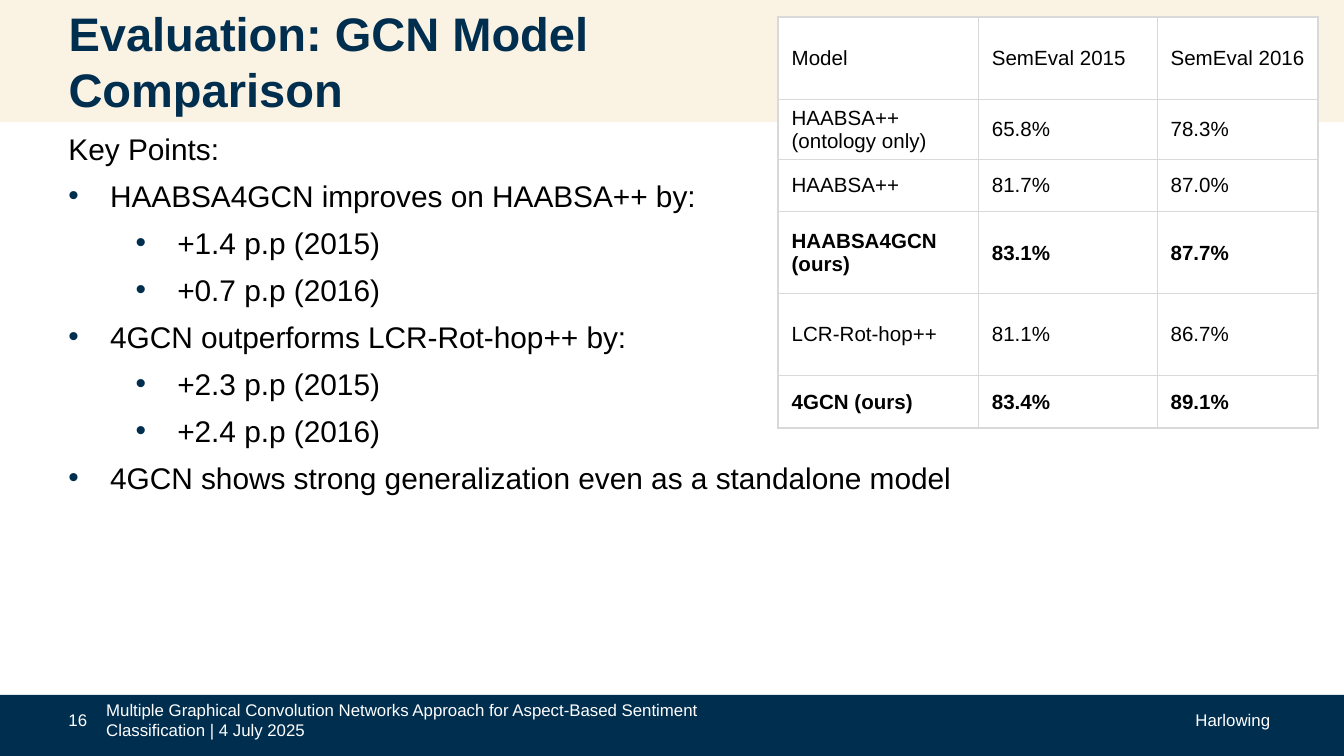
import pptx
import pptx.util
import pptx.dml.color
import pptx.enum.shapes
import pptx.enum.text
import pptx.oxml.ns
from lxml import etree

Inches = pptx.util.Inches
Pt = pptx.util.Pt
qn = pptx.oxml.ns.qn
Align = pptx.enum.text.PP_ALIGN
Anchor = pptx.enum.text.MSO_ANCHOR


class Theme:
    font = "Arial"
    navy = "002E4F"
    cream = "FAF2E3"
    white = "FFFFFF"
    black = "000000"
    grid = "D9D9D9"
    title = 25.2
    body = 16
    cell = 11
    foot = 9


def style(para, size, color, bold=False):
    para.font.name = Theme.font
    para.font.size = Pt(size)
    para.font.bold = bold
    para.font.color.rgb = pptx.dml.color.RGBColor.from_string(color)


def add_text(box, words, size, color, anchor=Anchor.MIDDLE, pad=0):
    frame = slide.shapes.add_textbox(*map(Inches, box)).text_frame
    frame.word_wrap = True
    frame.vertical_anchor = anchor
    frame.margin_left = frame.margin_right = 0
    frame.margin_top = frame.margin_bottom = Inches(pad)
    frame.text = words
    style(frame.paragraphs[0], size, color)
    return frame


deck = pptx.Presentation()
deck.slide_width = Inches(10)
deck.slide_height = deck.slide_width * 9 // 16
slide = deck.slides.add_slide(deck.slide_layouts[6])

foot = Inches(5.17)
for top, height, color in [(foot, deck.slide_height - foot, Theme.navy),
                           (0, Inches(0.91), Theme.cream)]:
    band = slide.shapes.add_shape(
        pptx.enum.shapes.MSO_SHAPE.RECTANGLE,
        0, top, deck.slide_width, height)
    band.shadow.inherit = False
    band.fill.solid()
    band.fill.fore_color.rgb = pptx.dml.color.RGBColor.from_string(color)
    band.line.fill.background()

add_text((0.51, 5.28, 0.2, 0.15), "16", Theme.foot, Theme.white)
add_text((0.79, 5.28, 4.72, 0.15),
         "Multiple Graphical Convolution Networks Approach for "
         "Aspect-Based Sentiment Classification | 4 July 2025",
         Theme.foot, Theme.white)
owner = add_text((6.73, 5.28, 2.72, 0.15), "Harlowing",
                 Theme.foot, Theme.white, Anchor.TOP)
owner.paragraphs[0].alignment = Align.RIGHT

title = add_text((0.51, 0.06, 5.28, 0.78), "Evaluation: GCN Model Comparison",
                 Theme.title, Theme.navy, pad=0.05)
title.paragraphs[0].font.bold = True

points = [
    (0, "HAABSA4GCN improves on HAABSA++ by:"),
    (1, "+1.4 p.p (2015)"),
    (1, "+0.7 p.p (2016)"),
    (0, "4GCN outperforms LCR-Rot-hop++ by:"),
    (1, "+2.3 p.p (2015)"),
    (1, "+2.4 p.p (2016)"),
    (0, "4GCN shows strong generalization even as a standalone model"),
]
body = add_text((0.51, 0.97, 8.94, 4.13), "Key Points:",
                Theme.body, Theme.black, Anchor.TOP)
for level, words in points:
    para = body.add_paragraph()
    para.text = words
    para.level = level
    props = para._p.get_or_add_pPr()
    props.set("marL", str(Inches(0.31 + 0.5 * level)))
    props.set("indent", str(-Inches(0.31)))
    tint = etree.SubElement(props, qn("a:buClr"))
    etree.SubElement(tint, qn("a:srgbClr"), val=Theme.navy)
    etree.SubElement(props, qn("a:buFont"), typeface=Theme.font)
    etree.SubElement(props, qn("a:buChar"), char="•")
    para.space_before = Pt(6)
    style(para, Theme.body, Theme.black)

scores = [
    ("Model", "SemEval 2015", "SemEval 2016"),
    ("HAABSA++ (ontology only)", "65.8%", "78.3%"),
    ("HAABSA++", "81.7%", "87.0%"),
    ("HAABSA4GCN (ours)", "83.1%", "87.7%"),
    ("LCR-Rot-hop++", "81.1%", "86.7%"),
    ("4GCN (ours)", "83.4%", "89.1%"),
]
widths = [1.49, 1.33, 1.2]
heights = [0.61, 0.39, 0.39, 0.61, 0.61, 0.39]
table = slide.shapes.add_table(
    len(heights), len(widths), Inches(5.79), Inches(0.13),
    Inches(sum(widths)), Inches(sum(heights))).table
table.first_row = table.horz_banding = False
for column, width in zip(table.columns, widths):
    column.width = Inches(width)
for r, (row, height) in enumerate(zip(scores, heights)):
    table.rows[r].height = Inches(height)
    for c, words in enumerate(row):
        cell = table.cell(r, c)
        cell.text = words
        cell.vertical_anchor = Anchor.MIDDLE
        cell.margin_top = cell.margin_bottom = Inches(0.04)
        style(cell.text_frame.paragraphs[0], Theme.cell, Theme.black,
              "(ours)" in row[0])
        cell.fill.solid()
        cell.fill.fore_color.rgb = pptx.dml.color.RGBColor.from_string(Theme.white)
        edges = {"L": c == 0, "R": c == len(widths) - 1,
                 "T": r == 0, "B": r == len(heights) - 1}
        for spot, (side, outer) in enumerate(edges.items()):
            line = etree.Element(qn("a:ln" + side), w=str(Pt(1.2 if outer else 0.75)))
            paint = etree.SubElement(line, qn("a:solidFill"))
            etree.SubElement(paint, qn("a:srgbClr"), val=Theme.grid)
            cell._tc.get_or_add_tcPr().insert(spot, line)

deck.save("out.pptx")
